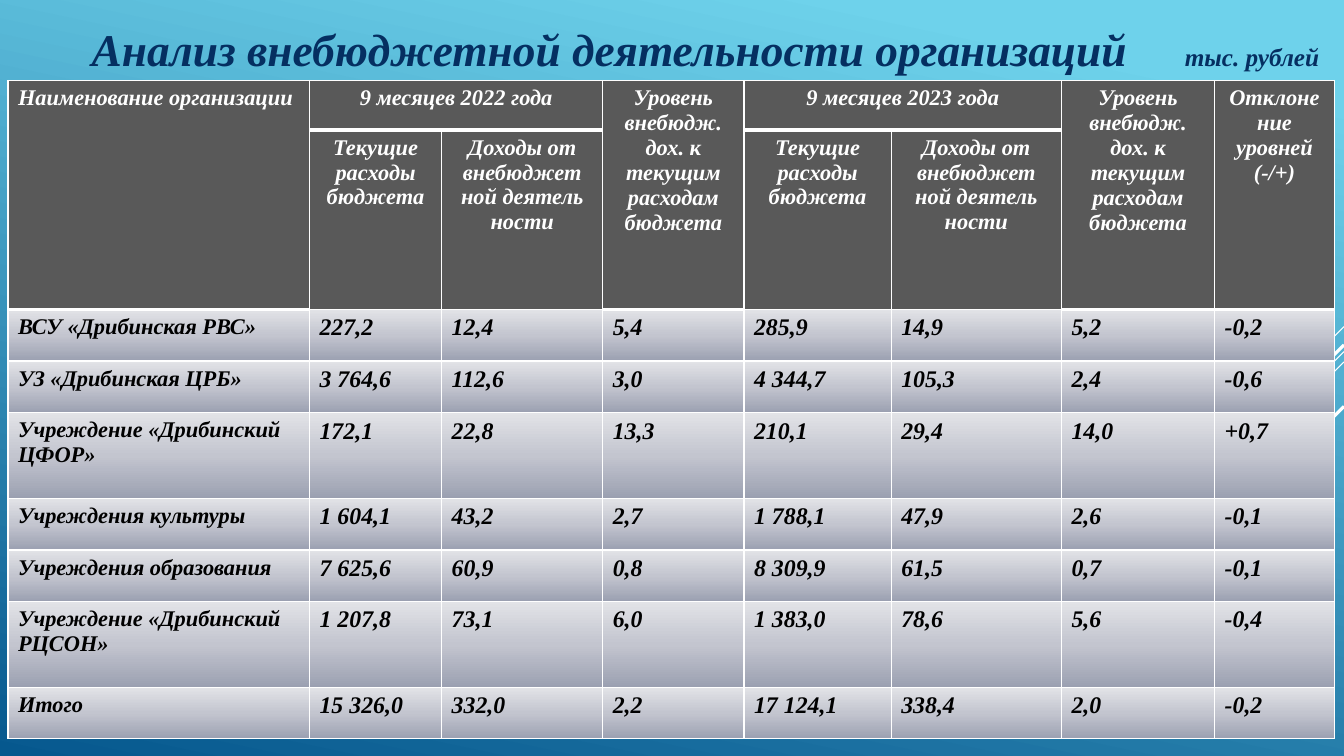
from copy import deepcopy

from pptx import Presentation
from pptx import util as u
from pptx.dml.color import RGBColor
from pptx.enum import shapes, text
from pptx.oxml import parse_xml
from pptx.oxml.ns import nsdecls, qn

TITLE = "Анализ внебюджетной деятельности организаций"
UNIT = "тыс. рублей"
EXPENSES = "Текущие расходы бюджета"
INCOME = "Доходы от внебюджет\nной деятель\nности"
LEVEL = "Уровень внебюдж. дох. к текущим расходам бюджета"
HEADER = [
    ["Наименование организации", "9 месяцев 2022 года", "", LEVEL,
     "9 месяцев 2023 года", "", LEVEL, "Отклоне\nние уровней\n(-/+)"],
    ["", EXPENSES, INCOME, "", EXPENSES, INCOME, "", ""],
]
BODY = [
    ["ВСУ «Дрибинская РВС»", "227,2", "12,4", "5,4", "285,9", "14,9", "5,2", "-0,2"],
    ["УЗ «Дрибинская ЦРБ»", "3 764,6", "112,6", "3,0", "4 344,7", "105,3", "2,4", "-0,6"],
    ["Учреждение «Дрибинский ЦФОР»", "172,1", "22,8", "13,3", "210,1", "29,4", "14,0", "+0,7"],
    ["Учреждения культуры", "1 604,1", "43,2", "2,7", "1 788,1", "47,9", "2,6", "-0,1"],
    ["Учреждения образования", "7 625,6", "60,9", "0,8", "8 309,9", "61,5", "0,7", "-0,1"],
    ["Учреждение «Дрибинский РЦСОН»", "1 207,8", "73,1", "6,0", "1 383,0", "78,6", "5,6", "-0,4"],
    ["Итого", "15 326,0", "332,0", "2,2", "17 124,1", "338,4", "2,0", "-0,2"],
]
MERGES = [((0, c), (1, c)) for c in (0, 3, 6, 7)] + [((0, c), (0, c + 1)) for c in (1, 4)]
COLS = [7.6, 3.33, 4.06, 3.56, 3.71, 4.29, 3.86, 3.02]
ROWS = [1.25, 4.52, 1.3, 1.3, 2.16, 1.3, 1.3, 2.16, 1.3]
DIAGONALS = [(8.23, 2.54, 0.75), (8.86, 8.28, 0.75), (9.12, 5.26, 0.75),
             (8.69, 4.85, 2.25), (10.24, 3.53, 2.25)]
WIDTH, HEIGHT = 33.87, 19.05

FONT = "Times New Roman"
NAVY = RGBColor(0x05, 0x2F, 0x61)
WHITE = RGBColor(0xFF, 0xFF, 0xFF)
BLACK = RGBColor(0, 0, 0)
GREY = RGBColor(0x59, 0x59, 0x59)
BACKGROUND = [(0.1, RGBColor(0x6E, 0xD2, 0xEB)), (1, RGBColor(0x06, 0x58, 0x8E))]
SILVER = [(0, RGBColor(0x9B, 0xA0, 0xB1)), (0.5, RGBColor(0xC3, 0xC5, 0xCF)),
          (1, RGBColor(0xE2, 0xE3, 0xE7))]


def write(p, content, size=16, color=BLACK, align=text.PP_ALIGN.LEFT):
    """Add a bold italic run to a paragraph."""
    p.alignment = align
    r = p.add_run()
    r.text = content
    r.font.name, r.font.size = FONT, u.Pt(size)
    r.font.bold = r.font.italic = True
    r.font.color.rgb = color


def gradient(fill, root, stops, angle):
    """Fill with a linear gradient of two or more stops."""
    fill.gradient()
    fill.gradient_angle = angle
    gs_list = next(root.iter(qn("a:gsLst")))
    for _ in stops[2:]:
        gs_list.append(deepcopy(gs_list[0]))
    for stop, (position, color) in zip(fill.gradient_stops, stops):
        stop.position = position
        stop.color.rgb = color


def border(cell, row):
    """Draw the white borders of a cell."""
    widths = {"L": 1, "R": 1, "B": 3 if row == 0 else 1}
    if row == 0:
        widths["T"] = 1
    tc_pr = cell._tc.get_or_add_tcPr()
    for i, side in enumerate(k for k in "LRTB" if k in widths):
        tc_pr.insert(i, parse_xml(
            f'<a:ln{side} {nsdecls("a")} w="{u.Pt(widths[side])}"><a:solidFill>'
            f'<a:srgbClr val="{WHITE}"/></a:solidFill></a:ln{side}>'))


def add_diagonals(s):
    """Draw the slanted lines that run down from the right edge."""
    for top, length, width in DIAGONALS:
        line = s.shapes.add_connector(
            shapes.MSO_CONNECTOR.STRAIGHT, u.Cm(WIDTH), u.Cm(top),
            u.Cm(WIDTH - length), u.Cm(top + length))
        line.line.color.rgb = WHITE
        line.line.width = u.Pt(width)
        line._element.spPr.append(parse_xml(f'<a:effectLst {nsdecls("a")}/>'))


def add_title(s):
    """Place the title with the unit at a tab stop."""
    sp = s.shapes.title
    sp.left, sp.top, sp.width, sp.height = u.Cm(0.2), u.Cm(0.43), u.Cm(33.45), u.Cm(1.6)
    tf = sp.text_frame
    tf.auto_size = text.MSO_AUTO_SIZE.NONE
    tf.vertical_anchor = text.MSO_ANCHOR.MIDDLE
    tf.margin_left, tf.margin_right = u.Cm(2.11), 0
    p = tf.paragraphs[0]
    write(p, TITLE + "\t", size=32.4, color=NAVY)
    write(p, UNIT, size=18, color=NAVY)
    p._p.get_or_add_pPr().append(parse_xml(
        f'<a:tabLst {nsdecls("a")}><a:tab pos="{u.Cm(27.55)}" algn="l"/></a:tabLst>'))


def add_budget_table(s):
    """Build the table of expenses and income."""
    rows = HEADER + BODY
    table = s.shapes.add_table(len(ROWS), len(COLS), u.Cm(0.2), u.Cm(2.03),
                               u.Cm(sum(COLS)), u.Cm(sum(ROWS))).table
    for column, width in zip(table.columns, COLS):
        column.width = u.Cm(width)
    for row, height in zip(table.rows, ROWS):
        row.height = u.Cm(height)
    for first, last in MERGES:
        table.cell(*first).merge(table.cell(*last))
    for i, values in enumerate(rows):
        head = i < len(HEADER)
        for j, value in enumerate(values):
            cell = table.cell(i, j)
            if head:
                cell.fill.solid()
                cell.fill.fore_color.rgb = GREY
            else:
                gradient(cell.fill, cell._tc, SILVER, 90)
            border(cell, i)
            if not value:
                continue
            tf = cell.text_frame
            for k, part in enumerate(value.split("\n")):
                p = tf.add_paragraph() if k else tf.paragraphs[0]
                write(p, part, size=16 if head or j == 0 else 17,
                      color=WHITE if head else BLACK,
                      align=text.PP_ALIGN.CENTER if head and j else text.PP_ALIGN.LEFT)


def main():
    """Build and save the slide."""
    prs = Presentation()
    prs.slide_width, prs.slide_height = u.Cm(WIDTH), u.Cm(HEIGHT)
    s = prs.slides.add_slide(prs.slide_layouts[5])
    gradient(s.background.fill, s._element, BACKGROUND, 258)
    add_diagonals(s)
    add_title(s)
    add_budget_table(s)
    prs.save("out.pptx")


if __name__ == "__main__":
    main()
